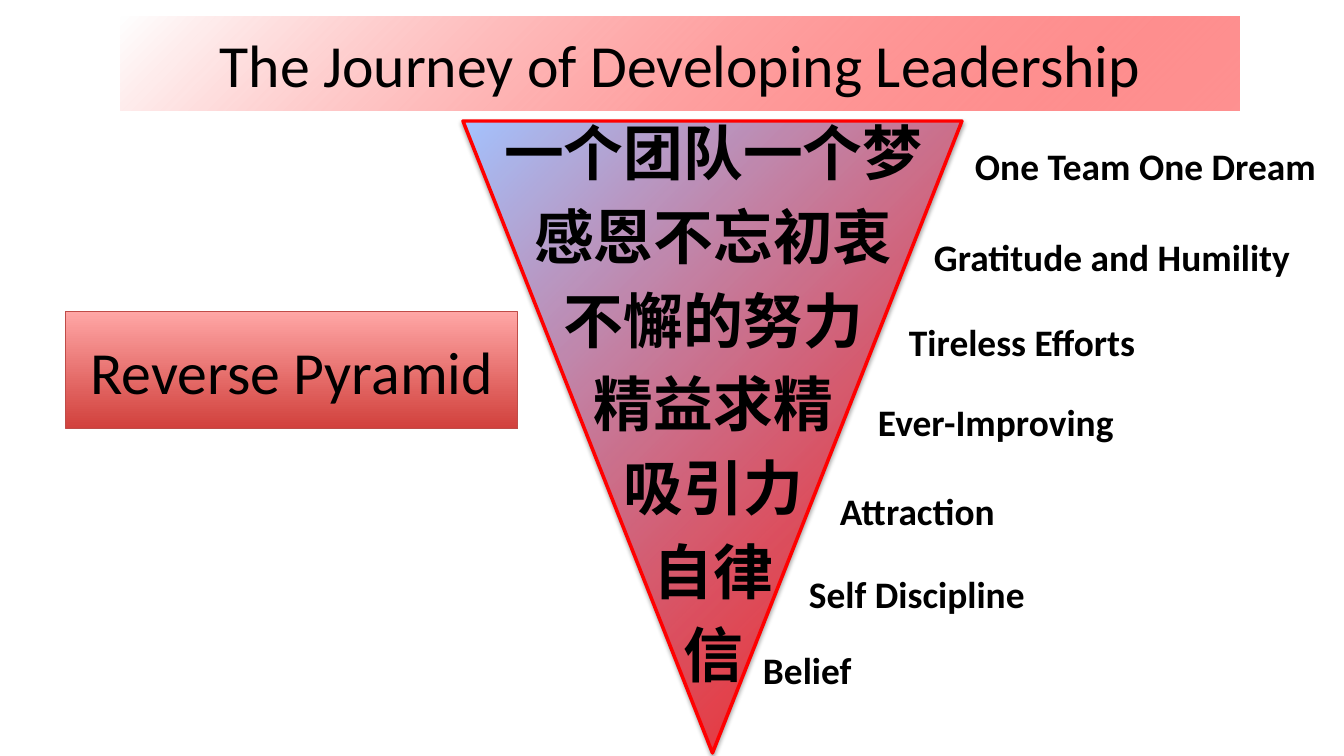
from lxml import etree
from pptx import Presentation
from pptx import util as u
from pptx.dml.color import RGBColor
from pptx.enum import shapes, text
from pptx.oxml import ns

PX = 914400 / 100.8
VALUES = [
    ("一个团队一个梦", "One Team One Dream", 962, 136, 382),
    ("感恩不忘初衷", "Gratitude and Humility", 921, 227, 389),
    ("不懈的努力", "Tireless Efforts", 896, 312, 269),
    ("精益求精", "Ever-Improving", 865, 392, 269),
    ("吸引力", "Attraction", 827, 481, 269),
    ("自律", "Self Discipline", 796, 564, 269),
    ("信", "Belief", 750, 640, 269),
]


def px(length):
    """Turn pixels into EMU."""
    return u.Emu(round(length * PX))


def rgb(value):
    """Turn a hex string into a colour."""
    return RGBColor.from_string(value)


def child(parent, tag, **attributes):
    """Append a DrawingML element with the given attributes."""
    values = {name: str(value) for name, value in attributes.items()}
    return etree.SubElement(parent, ns.qn("a:" + tag), values)


def colour_node(parent, value, opacity=100):
    """Append a colour with its opacity in percent."""
    node = child(parent, "srgbClr", val=value)
    if opacity < 100:
        child(node, "alpha", val=opacity * 1000)


def gradient(shape, stops, angle=None):
    """Fill a shape linearly, or radially from its bottom right corner."""
    shape.fill.gradient()
    fill = shape._element.spPr.find(ns.qn("a:gradFill"))
    for node in list(fill):
        fill.remove(node)
    stop_list = child(fill, "gsLst")
    for position, value, opacity in stops:
        colour_node(child(stop_list, "gs", pos=position * 1000), value, opacity)
    if angle is None:
        child(child(fill, "path", path="circle"), "fillToRect", l=100000, t=100000)
    else:
        child(fill, "lin", ang=angle * 60000, scaled=0)


def outline(shape, value, width):
    """Set the line colour and width in points."""
    shape.line.color.rgb = rgb(value)
    shape.line.width = u.Pt(width)


def drop_shadow(shape):
    """Give a shape a soft shadow below it."""
    shape.shadow.inherit = False
    effects = shape._element.spPr.find(ns.qn("a:effectLst"))
    shadow = child(effects, "outerShdw", blurRad=u.Pt(3.1), dist=u.Pt(1.8),
                   dir=5400000, rotWithShape=0)
    colour_node(shadow, "000000", 35)


def place(shape, left, top, width, height):
    """Move and size a shape in pixels."""
    shape.left, shape.top = px(left), px(top)
    shape.width, shape.height = px(width), px(height)


def write(shape, lines, size, font="Calibri", bold=False, align=None, inset=(13, 7)):
    """Fill a shape with one paragraph per line."""
    frame = shape.text_frame
    frame.text = "\n".join(lines)
    frame.word_wrap = True
    frame.margin_left = frame.margin_right = px(inset[0])
    frame.margin_top = frame.margin_bottom = px(inset[1])
    for paragraph in frame.paragraphs:
        paragraph.alignment = align
        paragraph.font.name = font
        paragraph.font.size = u.Pt(size)
        paragraph.font.bold = bold
        paragraph.font.color.rgb = rgb("000000")
        child(paragraph._p.pPr.find(ns.qn("a:defRPr")), "ea", typeface=font)
    return frame


def add_pyramid(slide):
    """Draw the inverted pyramid behind everything else."""
    pyramid = slide.shapes.add_shape(
        shapes.MSO_SHAPE.FLOWCHART_MERGE, px(463), px(121), px(499), px(632))
    gradient(pyramid, [(7, "FF0000", 76), (100, "A4C4FF", 100)])
    outline(pyramid, "FF0000", 2.5)
    drop_shadow(pyramid)
    slide.shapes._spTree.insert(2, pyramid._element)


def add_heading(title):
    """Format the title banner."""
    place(title, 121, 17, 1119, 94)
    gradient(title, [(0, "FF0000", 43), (100, "FFFFFF", 100)])
    frame = write(title, ["The Journey of Developing Leadership"], 42.7,
                  align=text.PP_ALIGN.CENTER, inset=(10, 5))
    frame.vertical_anchor = text.MSO_ANCHOR.MIDDLE


def add_levels(levels):
    """Write the pyramid levels from top to tip."""
    place(levels, 362, 111, 703, 559)
    frame = write(levels, [value[0] for value in VALUES], 42.7, "Noto Sans CJK SC",
                  True, text.PP_ALIGN.CENTER, (10, 5))
    frame.auto_size = text.MSO_AUTO_SIZE.NONE


def add_translation(slide, wording, left, top, width):
    """Put the English wording beside its level."""
    box = slide.shapes.add_textbox(px(left), px(top), px(width), px(58))
    frame = write(box, [wording], 26.7, bold=True)
    frame.auto_size = text.MSO_AUTO_SIZE.SHAPE_TO_FIT_TEXT


def add_caption(slide):
    """Draw the box that names the diagram."""
    caption = slide.shapes.add_shape(
        shapes.MSO_SHAPE.RECTANGLE, px(66), px(312), px(452), px(117))
    caption.shadow.inherit = False
    gradient(caption, [(0, "D1403C", 100), (100, "FFA6A5", 100)], 270)
    outline(caption, "BF4C48", 0.75)
    frame = write(caption, ["Reverse Pyramid"], 42.7, align=text.PP_ALIGN.CENTER)
    frame.vertical_anchor = text.MSO_ANCHOR.MIDDLE


def main():
    """Build and save the slide."""
    deck = Presentation()
    deck.slide_width, deck.slide_height = px(1344), px(756)
    slide = deck.slides.add_slide(deck.slide_layouts[0])
    add_heading(slide.shapes.title)
    add_levels(slide.placeholders[1])
    add_pyramid(slide)
    for _, wording, left, top, width in VALUES:
        add_translation(slide, wording, left, top, width)
    add_caption(slide)
    deck.save("out.pptx")


if __name__ == "__main__":
    main()
